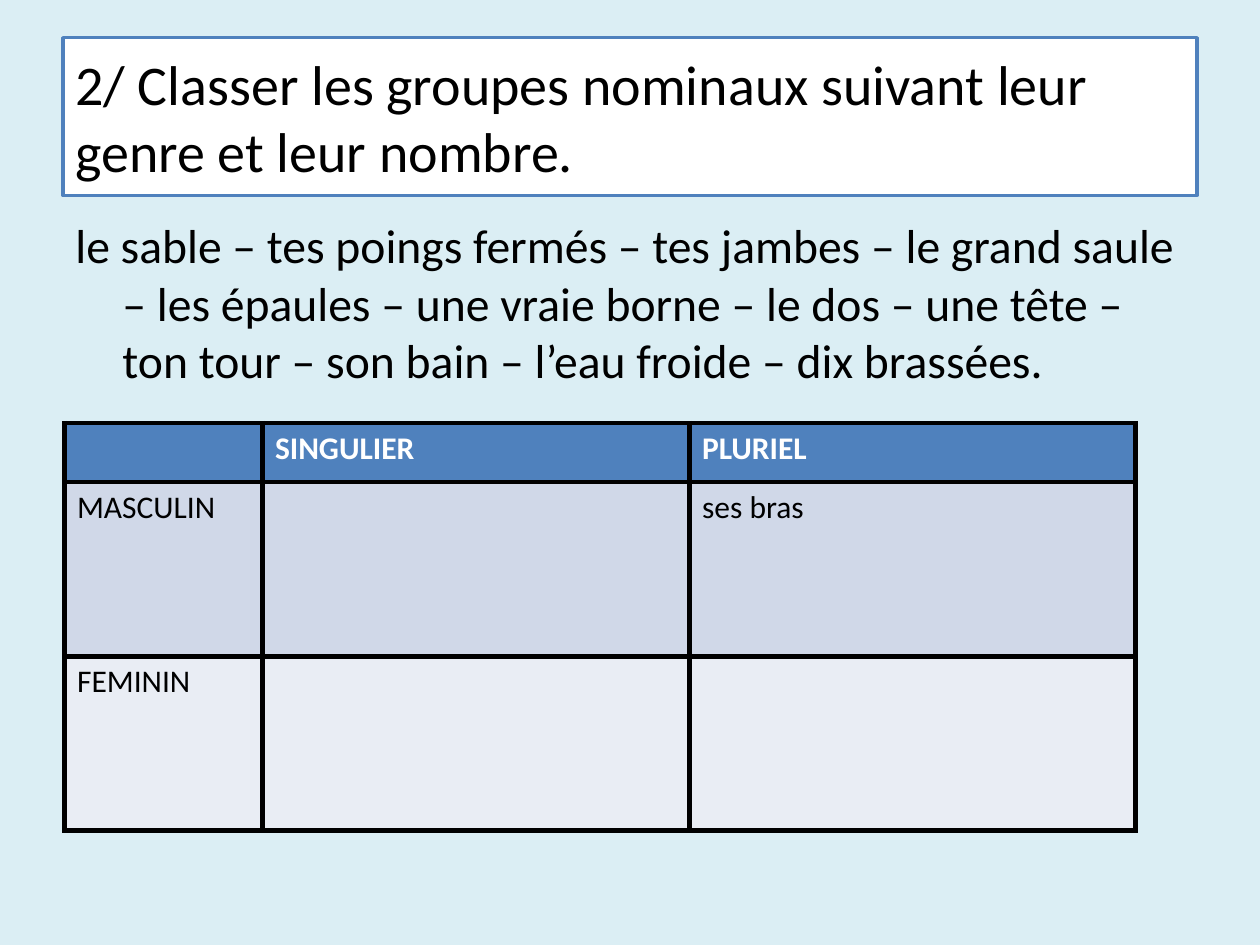
from dataclasses import dataclass

from lxml import etree
from pptx import Presentation
from pptx.dml.color import RGBColor
from pptx.enum.shapes import MSO_SHAPE
from pptx.enum.text import MSO_ANCHOR, PP_ALIGN
from pptx.oxml.ns import qn
from pptx.util import Cm, Pt

RECT = MSO_SHAPE.RECTANGLE
MIDDLE = MSO_ANCHOR.MIDDLE
LEFT = PP_ALIGN.LEFT


@dataclass(frozen=True)
class Theme:
    font: str = "Calibri"
    background: str = "DBEEF4"
    accent: str = "4F81BD"
    light: str = "FFFFFF"
    dark: str = "000000"
    bands: tuple = ("D0D8E8", "E9EDF4")
    title_size: float = 32
    body_size: float = 27.2
    table_size: float = 18
    frame_width: float = 2
    border_width: float = 3


THEME = Theme()
TITLE = "2/ Classer les groupes nominaux suivant leur genre et leur nombre."
NOUN_GROUPS = (
    "le sable – tes poings fermés – tes jambes – le grand saule – les épaules – "
    "une vraie borne – le dos – une tête – ton tour – son bain – l’eau froide – "
    "dix brassées."
)
ROWS = (
    ("", "SINGULIER", "PLURIEL"),
    ("MASCULIN", "", "ses bras"),
    ("FEMININ", "", ""),
)
COLUMN_WIDTHS = (3.99, 8.61, 8.99)
ROW_HEIGHTS = (1.19, 3.51, 3.51)


def rgb(value):
    return RGBColor.from_string(value)


def add_text(p, text, size, color=THEME.dark, bold=False):
    p.alignment = LEFT
    r = p.add_run()
    r.text = text
    r.font.name = THEME.font
    r.font.size = Pt(size)
    r.font.bold = bold
    r.font.color.rgb = rgb(color)


def add_title(s, left, top, width, height):
    sp = s.shapes.add_shape(RECT, Cm(left), Cm(top), Cm(width), Cm(height))
    sp.shadow.inherit = False
    sp.fill.solid()
    sp.fill.fore_color.rgb = rgb(THEME.light)
    sp.line.color.rgb = rgb(THEME.accent)
    sp.line.width = Pt(THEME.frame_width)
    tf = sp.text_frame
    tf.word_wrap = True
    tf.vertical_anchor = MIDDLE
    add_text(tf.paragraphs[0], TITLE, THEME.title_size)


def add_noun_groups(s, left, top, width, height):
    sp = s.shapes.add_textbox(Cm(left), Cm(top), Cm(width), Cm(height))
    tf = sp.text_frame
    tf.word_wrap = True
    tf.vertical_anchor = MIDDLE
    p = tf.paragraphs[0]
    p.space_before = Pt(0.2 * THEME.body_size)
    indent = Cm(0.95)
    pPr = p._p.get_or_add_pPr()
    pPr.set("marL", str(indent))
    pPr.set("indent", str(-indent))
    add_text(p, NOUN_GROUPS, THEME.body_size)


def add_borders(cell):
    tcPr = cell._tc.get_or_add_tcPr()
    for side in ("lnL", "lnR", "lnT", "lnB"):
        ln = etree.SubElement(tcPr, qn(f"a:{side}"), w=str(Pt(THEME.border_width)))
        fill = etree.SubElement(ln, qn("a:solidFill"))
        etree.SubElement(fill, qn("a:srgbClr"), val=THEME.dark)


def add_sorting_table(s, left, top):
    frame = s.shapes.add_table(
        len(ROWS), len(COLUMN_WIDTHS), Cm(left), Cm(top),
        Cm(sum(COLUMN_WIDTHS)), Cm(sum(ROW_HEIGHTS)),
    )
    table = frame.table
    for column, width in zip(table.columns, COLUMN_WIDTHS):
        column.width = Cm(width)
    for row, height in zip(table.rows, ROW_HEIGHTS):
        row.height = Cm(height)
    fills = (THEME.accent, *THEME.bands)
    for i, (texts, fill) in enumerate(zip(ROWS, fills)):
        header = i == 0
        color = THEME.light if header else THEME.dark
        for j, text in enumerate(texts):
            cell = table.cell(i, j)
            add_borders(cell)
            cell.fill.solid()
            cell.fill.fore_color.rgb = rgb(fill)
            if text:
                p = cell.text_frame.paragraphs[0]
                add_text(p, text, THEME.table_size, color, header)


def main():
    prs = Presentation()
    prs.slide_width = Cm(25.4)
    prs.slide_height = Cm(19.05)
    s = prs.slides.add_slide(prs.slide_layouts[6])
    s.background.fill.solid()
    s.background.fill.fore_color.rgb = rgb(THEME.background)
    add_title(s, 1.27, 0.76, 22.86, 3.18)
    add_noun_groups(s, 1.27, 4.45, 22.86, 3.28)
    add_sorting_table(s, 1.3, 8.53)
    prs.save("out.pptx")


if __name__ == "__main__":
    main()
